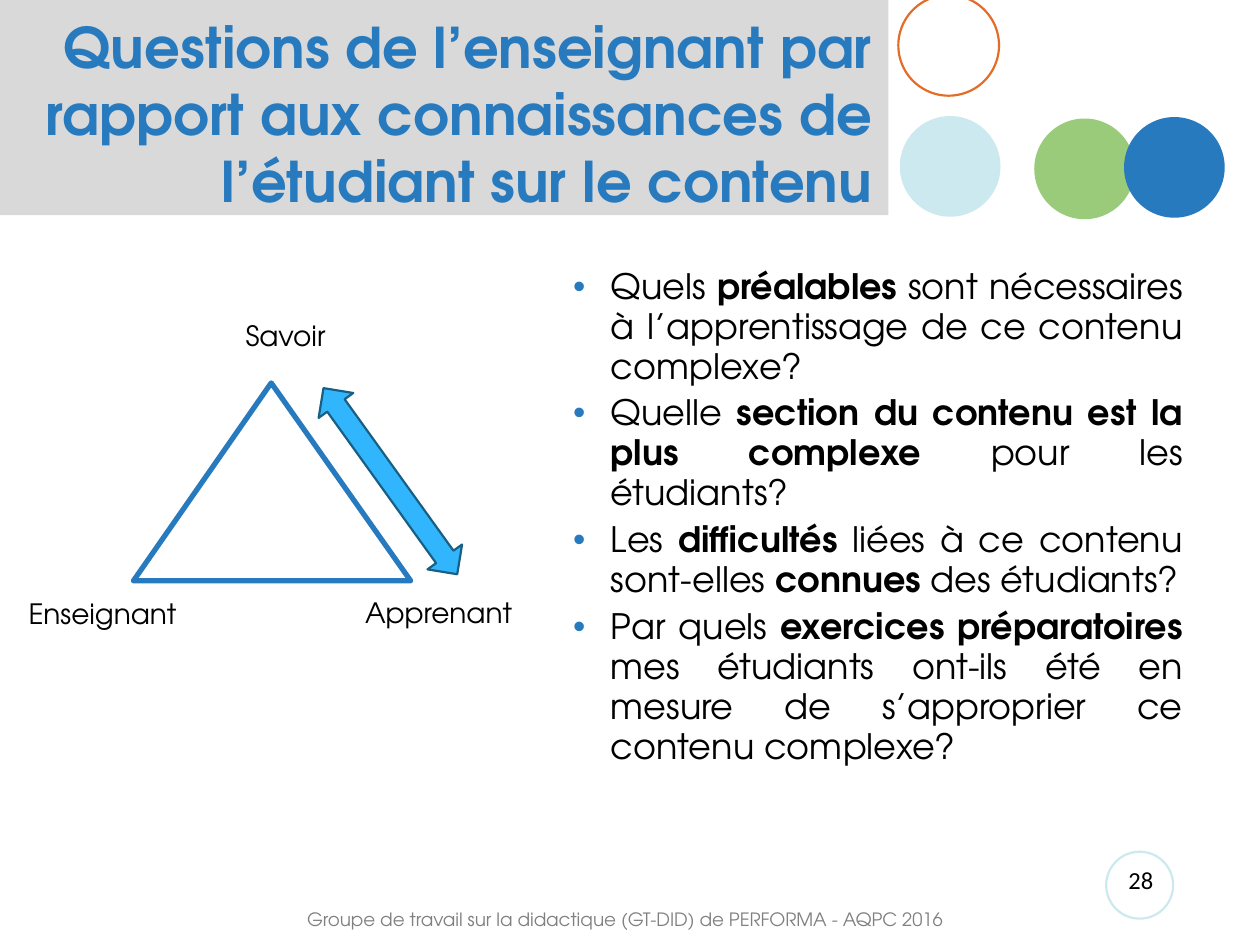
from lxml.etree import SubElement
from pptx import Presentation
from pptx.dml.color import RGBColor
from pptx.enum.shapes import MSO_SHAPE as Shape
from pptx.enum.text import MSO_ANCHOR as Anchor, MSO_AUTO_SIZE as AutoSize, PP_ALIGN as Align
from pptx.oxml.ns import qn
from pptx.util import Cm, Pt

FONT = "TeX Gyre Adventor"
BLUE, PALE, BLACK, WHITE = "287ABF", "CCE9EF", "000000", "FFFFFF"


def set_colour(fill, colour):
    """Make a shape, line or font fill solid, or empty when colour is None."""
    if colour:
        fill.solid()
        fill.fore_color.rgb = RGBColor.from_string(colour)
    else:
        fill.background()


def draw(kind, box, fill=None, line=None, width=1.25):
    """Add a preset shape; box is left, top, width, height in centimetres."""
    shape = slide.shapes.add_shape(kind, *map(Cm, box))
    shape.shadow.inherit = False
    set_colour(shape.fill, fill)
    set_colour(shape.line.fill, line)
    if line:
        shape.line.width = Pt(width)
    return shape


prs = Presentation()
prs.slide_width, prs.slide_height = Cm(25.4), Cm(19.05)
slide = prs.slides.add_slide(prs.slide_layouts[1])
title, questions = slide.placeholders

# Title band and decorative circles
draw(Shape.RECTANGLE, (0, 0, 17.91, 4.34), "D9D9D9")
for left, top, size, fill, line in [
    (20.85, 2.39, 2.03, "9ACB7A", None),
    (18.11, -0.1, 2.03, None, "E36D26"),
    (18.14, 2.34, 2.03, PALE, None),
    (22.66, 2.36, 2.03, BLUE, None),
    (22.3, 17.17, 1.35, None, PALE),
]:
    draw(Shape.OVAL, (left, top, size, size), fill, line)

# Title, brought in front of its band
title.element.getparent().append(title.element)
title.left, title.top, title.width, title.height = map(Cm, (0.25, 0.28, 17.6, 4.01))
title.text_frame.text = (
    "Questions de l’enseignant par rapport aux connaissances de l’étudiant sur le contenu"
)
title.text_frame.vertical_anchor = Anchor.MIDDLE
title.text_frame.auto_size = AutoSize.NONE
heading = title.text_frame.paragraphs[0]
heading.alignment = Align.RIGHT
heading_font = heading.runs[0].font
heading_font.name, heading_font.size, heading_font.bold = FONT, Pt(32), True
set_colour(heading_font.fill, BLUE)

# Questions: every second part is bold
QUESTIONS = [
    ["Quels ", "préalables", " sont nécessaires à l’apprentissage de ce contenu complexe?"],
    ["Quelle ", "section du contenu est la plus complexe ", "pour les étudiants?"],
    ["Les ", "difficultés", " liées à ce contenu sont-elles ", "connues", " des étudiants?"],
    ["Par quels ", "exercices préparatoires ",
     "mes étudiants ont-ils été en mesure de s’approprier ce contenu complexe?"],
]
questions.left, questions.top, questions.width, questions.height = map(Cm, (11.3, 5.26, 12.8, 12.07))
frame = questions.text_frame
frame.auto_size = AutoSize.NONE
for number, parts in enumerate(QUESTIONS):
    question = frame.add_paragraph() if number else frame.paragraphs[0]
    question.alignment = Align.JUSTIFY
    question.line_spacing = 0.95
    question.space_before = Pt(4 if number else 0)
    props = question._p.get_or_add_pPr()
    props.set("marL", str(Cm(0.76)))
    props.set("indent", str(-Cm(0.76)))
    SubElement(SubElement(props, qn("a:buClr")), qn("a:srgbClr"), val=BLUE)
    SubElement(props, qn("a:buFont"), typeface="Arial")
    SubElement(props, qn("a:buChar"), char="•")
    for index, part in enumerate(parts):
        run = question.add_run()
        run.text = part
        run.font.name, run.font.size, run.font.bold = FONT, Pt(20), index % 2 == 1
        set_colour(run.font.fill, BLACK)

# Didactic triangle
triangle = draw(Shape.ISOSCELES_TRIANGLE, (2.69, 7.72, 5.59, 3.99), WHITE, BLUE, 3)
triangle.adjustments[0] = 0.497

# Triangle labels, page number and footer
for text, box, size, font, colour, align, wrap, fill in [
    ("Savoir", (4.7, 6.3, 2.16, 0.94), 16, FONT, BLACK, Align.LEFT, False, WHITE),
    ("Enseignant", (0.28, 11.91, 3.53, 0.94), 16, FONT, BLACK, Align.RIGHT, False, WHITE),
    ("Apprenant", (7.11, 11.89, 3.53, 0.94), 16, FONT, BLACK, Align.LEFT, False, WHITE),
    ("28", (22.3, 17.32, 1.4, 1.02), 14, "Calibri", BLACK, Align.CENTER, True, None),
    ("Groupe de travail sur la didactique (GT-DID) de PERFORMA - AQPC 2016",
     (5.94, 18.19, 14.94, 0.74), 10.5, FONT, "808080", Align.LEFT, True, None),
]:
    label = slide.shapes.add_textbox(*map(Cm, box))
    set_colour(label.fill, fill)
    label.text_frame.word_wrap = wrap
    label.text_frame.text = text
    line = label.text_frame.paragraphs[0]
    line.alignment = align
    label_font = line.runs[0].font
    label_font.name, label_font.size = font, Pt(size)
    set_colour(label_font.fill, colour)

# Link between knowledge and learner
link = draw(Shape.UP_DOWN_ARROW, (7.44, 7.39, 0.86, 4.62), "31B6FD", "195F84")
link.rotation = 324.3

prs.save("out.pptx")
